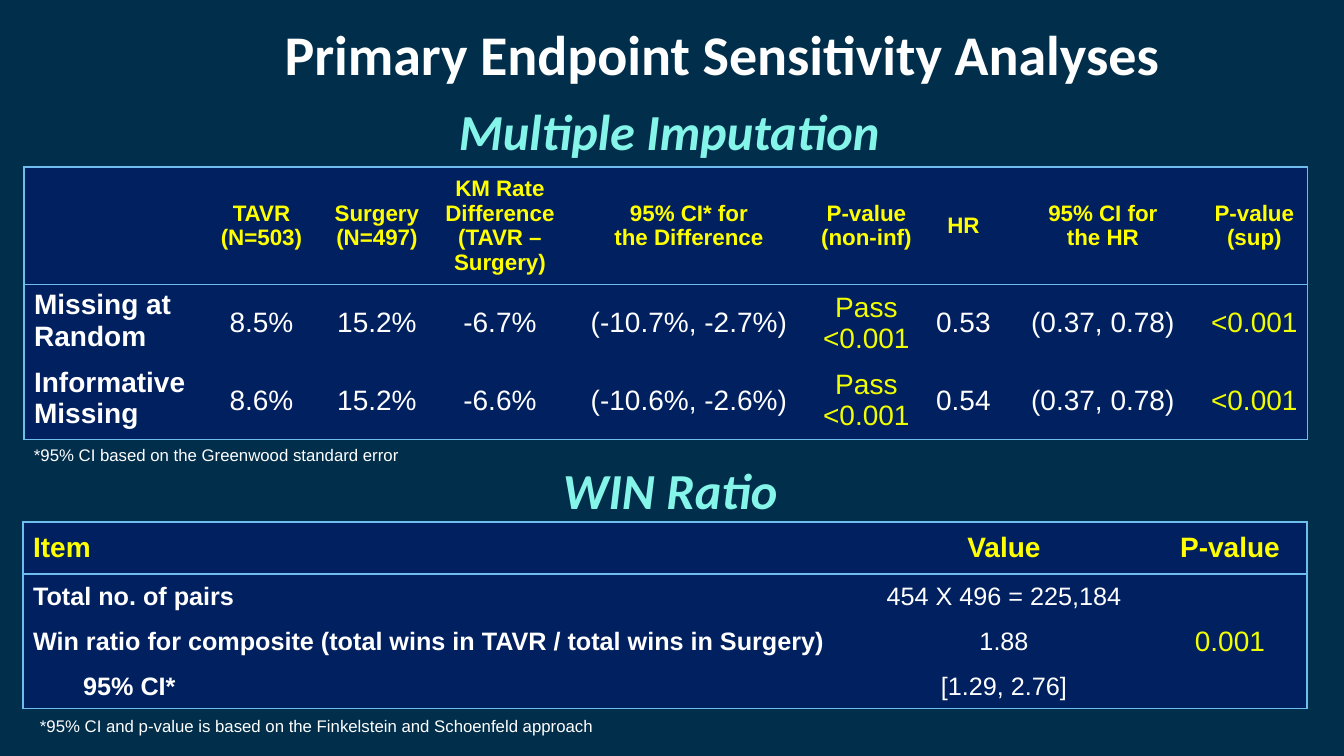
from dataclasses import dataclass

from lxml import etree
from pptx import Presentation
from pptx.dml.color import RGBColor
from pptx.enum.text import MSO_ANCHOR, PP_ALIGN
from pptx.oxml.ns import qn
from pptx.util import Pt

LEFT, CENTER = PP_ALIGN.LEFT, PP_ALIGN.CENTER
TOP, MIDDLE = MSO_ANCHOR.TOP, MSO_ANCHOR.MIDDLE
TITLE_ONLY = 5
EMU_PER_INCH, PX_PER_INCH = 914400, 100.8


@dataclass(frozen=True)
class Theme:
    background: str = "002E4B"
    panel: str = "002060"
    border: str = "6FBDEE"
    white: str = "FFFFFF"
    header: str = "FFFF00"
    accent: str = "F1FE00"
    heading: str = "85F5E9"
    title_font: str = "Calibri"
    body_font: str = "Arial"
    title_size: int = 40
    heading_size: int = 36
    large: int = 20
    medium: int = 18
    small: int = 16
    note: int = 12


THEME = Theme()


def px(n):
    return round(n * EMU_PER_INCH / PX_PER_INCH)


def rgb(color):
    return RGBColor.from_string(color)


def write(tf, text, size, color=THEME.white, font=THEME.body_font,
          bold=False, italic=False, align=LEFT, indent=0):
    """Fill a text frame, one paragraph per line of text."""
    for i, line in enumerate(text.split("\n")):
        p = tf.paragraphs[0] if i == 0 else tf.add_paragraph()
        p.alignment = align
        if indent:
            p._p.get_or_add_pPr().set("marL", str(px(indent)))
        r = p.add_run()
        r.text = line
        f = r.font
        f.name, f.size, f.bold, f.italic = font, Pt(size), bold, italic
        f.color.rgb = rgb(color)


def add_title(s, box, text):
    sp = s.shapes.title
    sp.left, sp.top, sp.width, sp.height = map(px, box)
    tf = sp.text_frame
    tf.vertical_anchor = MIDDLE
    tf.margin_left, tf.margin_right = px(105), px(5)
    tf.margin_top = tf.margin_bottom = px(5)
    write(tf, text, THEME.title_size, font=THEME.title_font, bold=True, align=CENTER)


def add_label(s, box, text, wrap=False, **fmt):
    tf = s.shapes.add_textbox(*map(px, box)).text_frame
    tf.word_wrap = wrap
    write(tf, text, **fmt)


def set_borders(cell, visible):
    """Draw the listed sides (letters of LRTB) and clear the others."""
    tc_pr = cell._tc.get_or_add_tcPr()
    for side in "LRTB":
        ln = etree.SubElement(tc_pr, qn(f"a:ln{side}"), w=str(Pt(1)))
        if side in visible:
            fill = etree.SubElement(ln, qn("a:solidFill"))
            etree.SubElement(fill, qn("a:srgbClr"), val=THEME.border)
        else:
            etree.SubElement(ln, qn("a:noFill"))


def add_panel_table(s, left, top, widths, heights, rows, cell_format):
    """Outlined table with a rule under its header; cell_format(row, col) gives text format."""
    last_row, last_col = len(rows) - 1, len(widths) - 1
    box = (left, top, sum(widths), sum(heights))
    table = s.shapes.add_table(len(rows), len(widths), *map(px, box)).table
    table.first_row = table.horz_banding = False
    for column, width in zip(table.columns, widths):
        column.width = px(width)
    for row, height in zip(table.rows, heights):
        row.height = px(height)
    for i, values in enumerate(rows):
        for j, text in enumerate(values):
            cell = table.cell(i, j)
            sides = {"L": j == 0, "R": j == last_col,
                     "T": i <= 1, "B": i in (0, last_row)}
            set_borders(cell, [side for side, shown in sides.items() if shown])
            cell.fill.solid()
            cell.fill.fore_color.rgb = rgb(THEME.panel)
            fmt = cell_format(i, j)
            cell.vertical_anchor = fmt.pop("anchor", MIDDLE)
            if text:
                write(cell.text_frame, text, **fmt)


def imputation_format(i, j):
    if i == 0:
        return dict(size=THEME.small, color=THEME.header, bold=True, align=CENTER)
    if j == 0:
        return dict(size=THEME.large, bold=True, anchor=TOP)
    color = THEME.accent if j in (5, 8) else THEME.white
    return dict(size=THEME.large, color=color, align=CENTER)


def win_ratio_format(i, j):
    align = LEFT if j == 0 else CENTER
    if i == 0:
        return dict(size=THEME.large, color=THEME.header, bold=True, align=align)
    if j == 2:
        return dict(size=THEME.large, color=THEME.accent, align=align)
    return dict(size=THEME.medium, bold=j == 0, align=align,
                indent=50 if (i, j) == (3, 0) else 0)


HEADING = dict(size=THEME.heading_size, color=THEME.heading,
               font=THEME.title_font, bold=True, italic=True)

IMPUTATION_ROWS = [
    ["", "TAVR\n(N=503)", "Surgery\n(N=497)", "KM Rate Difference\n(TAVR – Surgery)",
     "95% CI* for\nthe Difference", "P-value\n(non-inf)", "HR", "95% CI for\nthe HR",
     "P-value (sup)"],
    ["Missing at Random", "8.5%", "15.2%", "-6.7%", "(-10.7%, -2.7%)",
     "Pass\n<0.001", "0.53", "(0.37, 0.78)", "<0.001"],
    ["Informative Missing", "8.6%", "15.2%", "-6.6%", "(-10.6%, -2.6%)",
     "Pass\n<0.001", "0.54", "(0.37, 0.78)", "<0.001"],
]

WIN_RATIO_ROWS = [
    ["Item", "Value", "P-value"],
    ["Total no. of pairs", "454 X 496 = 225,184", ""],
    ["Win ratio for composite (total wins in TAVR / total wins in Surgery)", "1.88", "0.001"],
    ["95% CI*", "[1.29, 2.76]", ""],
]


def add_imputation(s, left, top):
    add_label(s, (left + 425, top, 447, 72), "Multiple Imputation", **HEADING)
    add_panel_table(s, left, top + 72, [178, 119, 112, 134, 244, 111, 83, 196, 107],
                    [110, 73, 72], IMPUTATION_ROWS, imputation_format)
    add_label(s, (left, top + 345, 401, 30),
              "*95% CI based on the Greenwood standard error", size=THEME.note)


def add_win_ratio(s, left, top):
    add_label(s, (left + 530, top, 238, 72), "WIN Ratio", **HEADING)
    add_panel_table(s, left, top + 68, [832, 298, 154], [52, 45, 45, 45],
                    WIN_RATIO_ROWS, win_ratio_format)
    add_label(s, (left + 7, top + 257, 1314, 30),
              "*95% CI and p-value is based on the Finkelstein and Schoenfeld approach",
              wrap=True, size=THEME.note)


def main():
    prs = Presentation()
    prs.slide_width, prs.slide_height = px(1344), px(756)
    s = prs.slides.add_slide(prs.slide_layouts[TITLE_ONLY])
    s.background.fill.solid()
    s.background.fill.fore_color.rgb = rgb(THEME.background)
    add_title(s, (0, 11, 1344, 84), "Primary Endpoint Sensitivity Analyses")
    add_imputation(s, 24, 95)
    add_win_ratio(s, 23, 454)
    prs.save("out.pptx")


if __name__ == "__main__":
    main()
